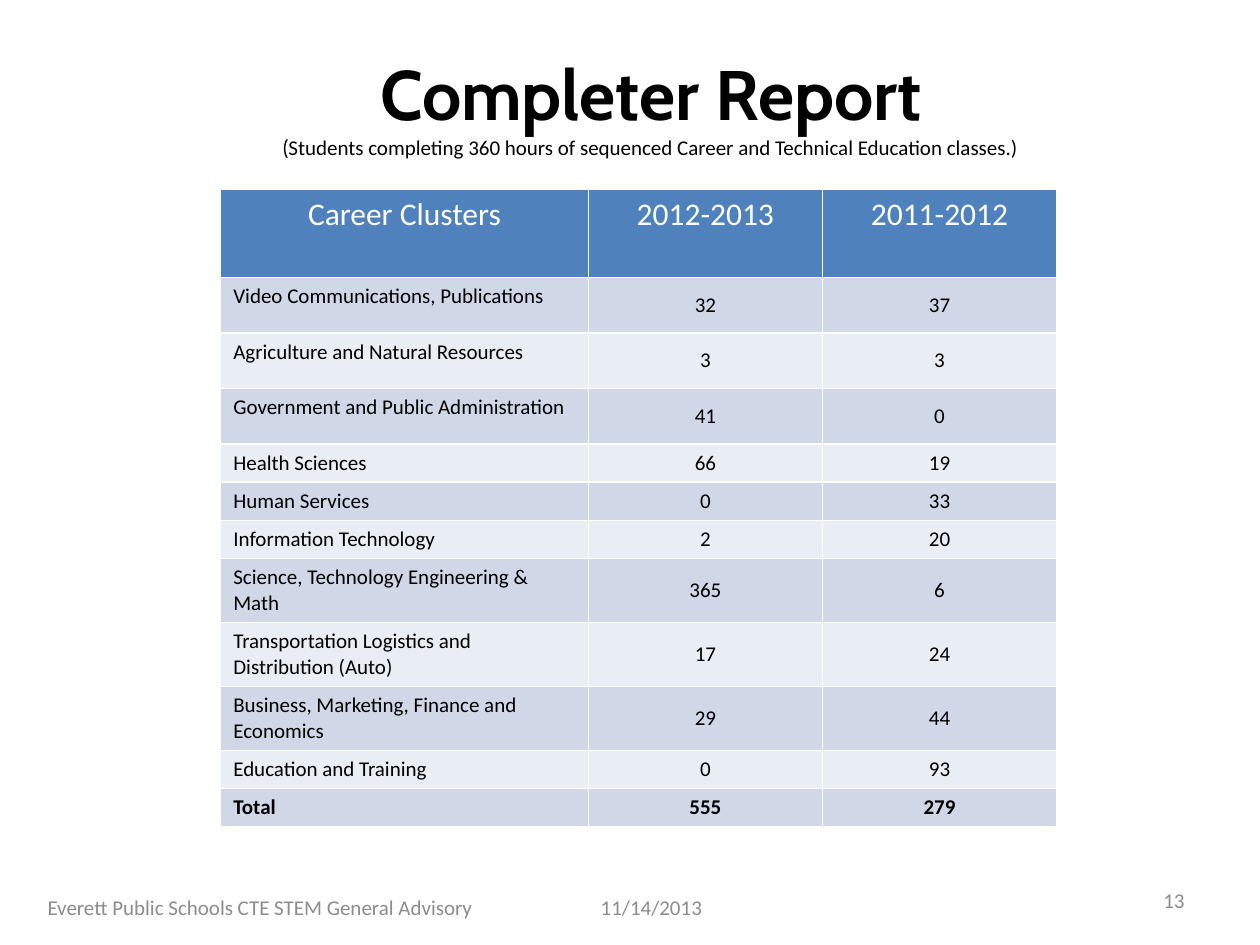
"""Build the Completer Report slide with its career cluster table."""
from lxml import etree
from pptx import Presentation
from pptx import util as u
from pptx.dml.color import RGBColor
from pptx.enum import text
from pptx.oxml import ns

BLACK = RGBColor(0x00, 0x00, 0x00)
WHITE = RGBColor(0xFF, 0xFF, 0xFF)
GREY = RGBColor(0x8C, 0x8C, 0x8C)
HEADER_BLUE = RGBColor(0x4F, 0x81, 0xBD)
BANDS = [RGBColor(0xE9, 0xED, 0xF4), RGBColor(0xD0, 0xD8, 0xE8)]

LEFT, CENTER, RIGHT = text.PP_ALIGN.LEFT, text.PP_ALIGN.CENTER, text.PP_ALIGN.RIGHT
MIDDLE, TOP = text.MSO_ANCHOR.MIDDLE, text.MSO_ANCHOR.TOP

SHORT, TALL, HEADER = 0.71, 1.12, 1.78
ROWS = [
    (HEADER, "Career Clusters", "2012-2013", "2011-2012"),
    (TALL, "Video Communications, Publications", "32", "37"),
    (TALL, "Agriculture and Natural Resources", "3", "3"),
    (TALL, "Government and Public Administration", "41", "0"),
    (SHORT, "Health Sciences", "66", "19"),
    (SHORT, "Human Services", "0", "33"),
    (SHORT, "Information Technology", "2", "20"),
    (TALL, "Science, Technology Engineering & Math", "365", "6"),
    (TALL, "Transportation Logistics and Distribution (Auto)", "17", "24"),
    (TALL, "Business, Marketing, Finance and Economics", "29", "44"),
    (SHORT, "Education and Training", "0", "93"),
    (SHORT, "Total", "555", "279"),
]
COLUMN_WIDTHS = [7.41, 4.72, 4.72]
FOOTERS = [
    ("13", 18.21, 17.65, 5.92, RIGHT),
    ("Everett Public Schools CTE STEM General Advisory", 0, 17.78, 10.49, CENTER),
    ("11/14/2013", 11.86, 17.78, 5.92, LEFT),
]


def style(span, size, color, name="Calibri", bold=False):
    span.font.size = u.Pt(size)
    span.font.name = name
    span.font.bold = bold
    span.font.color.rgb = color


deck = Presentation()
deck.slide_width, deck.slide_height = u.Cm(25.4), u.Cm(19.05)
page = deck.slides.add_slide(deck.slide_layouts[5])

title = page.shapes.title
title.left, title.top, title.width, title.height = u.Cm(1.27), u.Cm(0.43), u.Cm(23.7), u.Cm(3.38)
title.text_frame.auto_size = text.MSO_AUTO_SIZE.NONE
title.text_frame.vertical_anchor = MIDDLE
para = title.text_frame.paragraphs[0]
para.text = "Completer Report\v("
para.alignment = CENTER
para.add_run().text = "Students completing 360 hours of sequenced Career and Technical Education classes.)"
heading, bracket, subtitle = para.runs
style(heading, 40, BLACK, "Cabin", True)
style(bracket, 12, BLACK, "Cabin")
style(subtitle, 12, BLACK)
line_break = para._p.find(ns.qn("a:br"))
etree.SubElement(line_break, ns.qn("a:rPr"), sz="4000")

table = page.shapes.add_table(
    len(ROWS), len(COLUMN_WIDTHS), u.Cm(4.45), u.Cm(3.81),
    u.Cm(sum(COLUMN_WIDTHS)), u.Cm(sum(row[0] for row in ROWS)),
).table
for column, width in zip(table.columns, COLUMN_WIDTHS):
    column.width = u.Cm(width)

for row_index, (height, *values) in enumerate(ROWS):
    table.rows[row_index].height = u.Cm(height)
    is_header = row_index == 0
    is_total = row_index == len(ROWS) - 1
    for column_index, value in enumerate(values):
        is_label = column_index == 0
        cell = table.cell(row_index, column_index)
        cell.fill.solid()
        cell.fill.fore_color.rgb = HEADER_BLUE if is_header else BANDS[row_index % 2]
        cell.vertical_anchor = TOP if is_header or is_label else MIDDLE
        para = cell.text_frame.paragraphs[0]
        para.text = value
        para.alignment = LEFT if is_label and not is_header else CENTER
        style(para.runs[0], 18 if is_header else 12, WHITE if is_header else BLACK, bold=is_total)

for words, left, top, width, alignment in FOOTERS:
    box = page.shapes.add_textbox(u.Cm(left), u.Cm(top), u.Cm(width), u.Cm(1.01))
    box.text_frame.word_wrap = True
    box.text_frame.vertical_anchor = MIDDLE
    para = box.text_frame.paragraphs[0]
    para.text = words
    para.alignment = alignment
    style(para.runs[0], 12, GREY)

deck.save("out.pptx")
